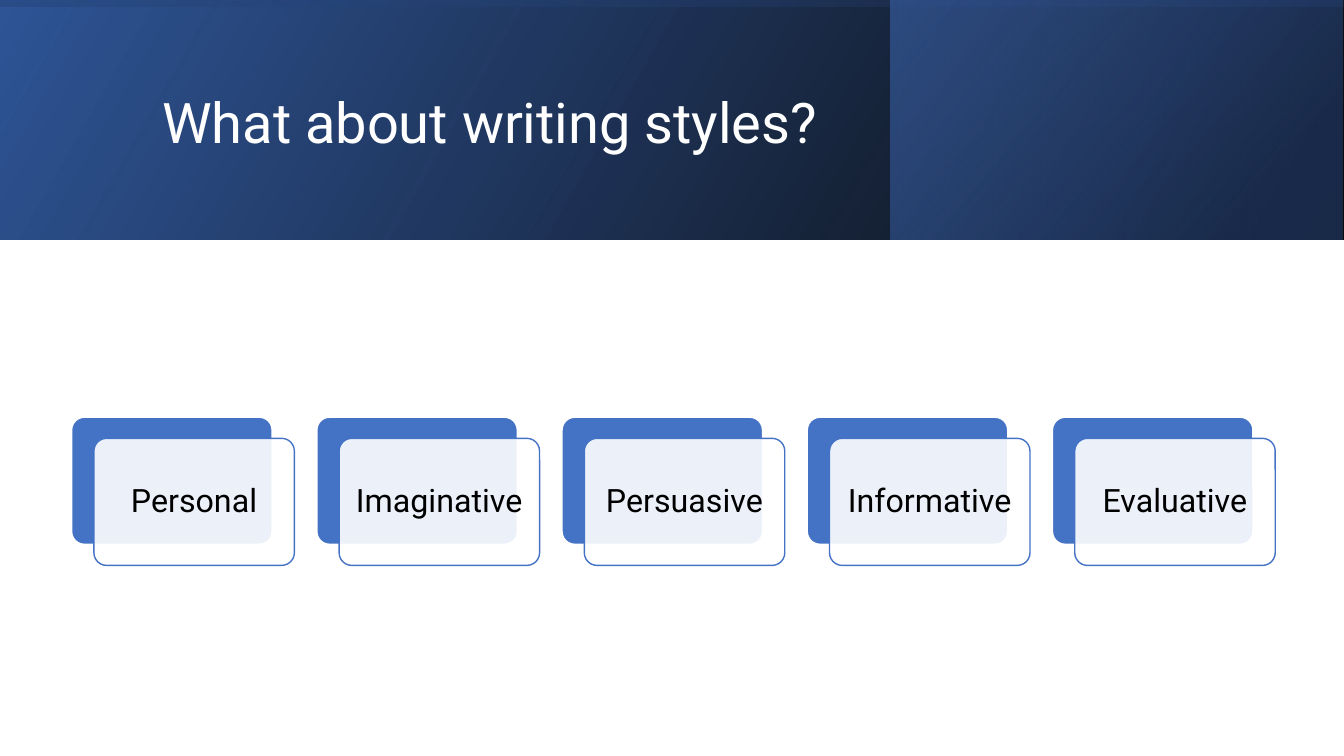
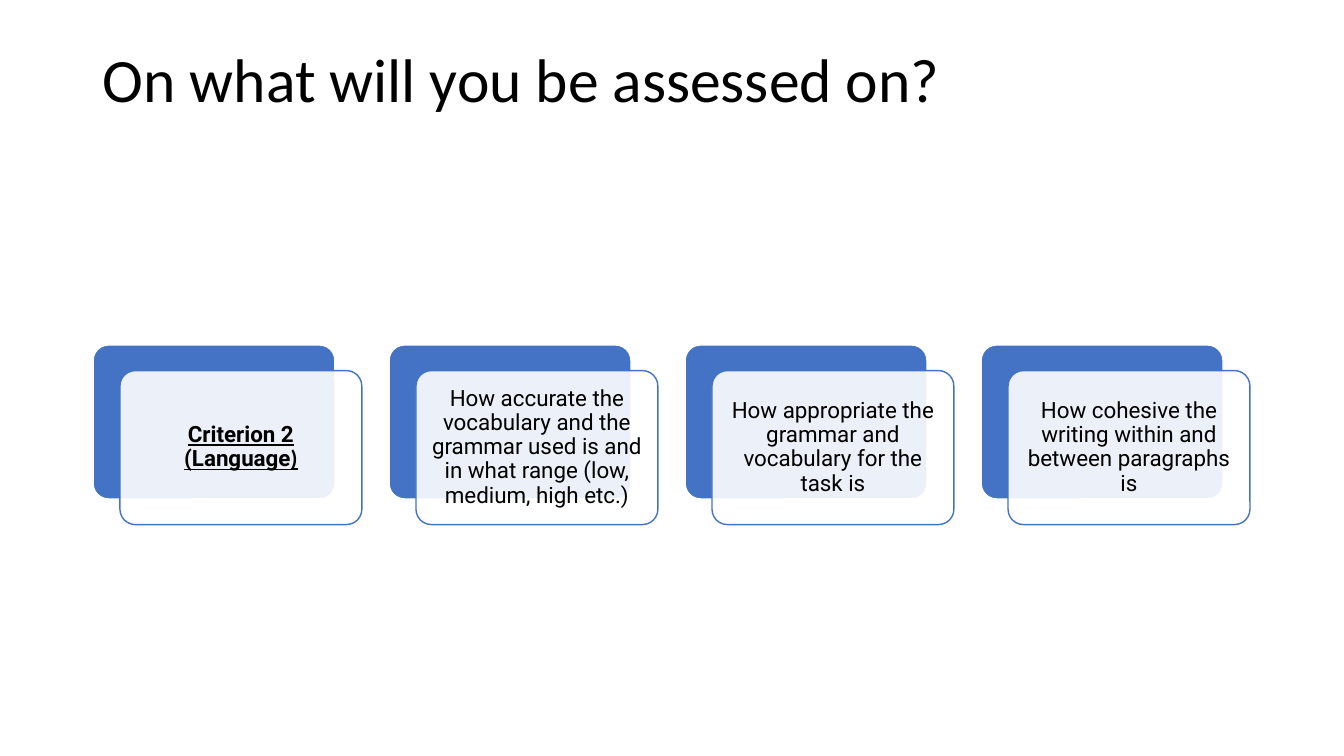
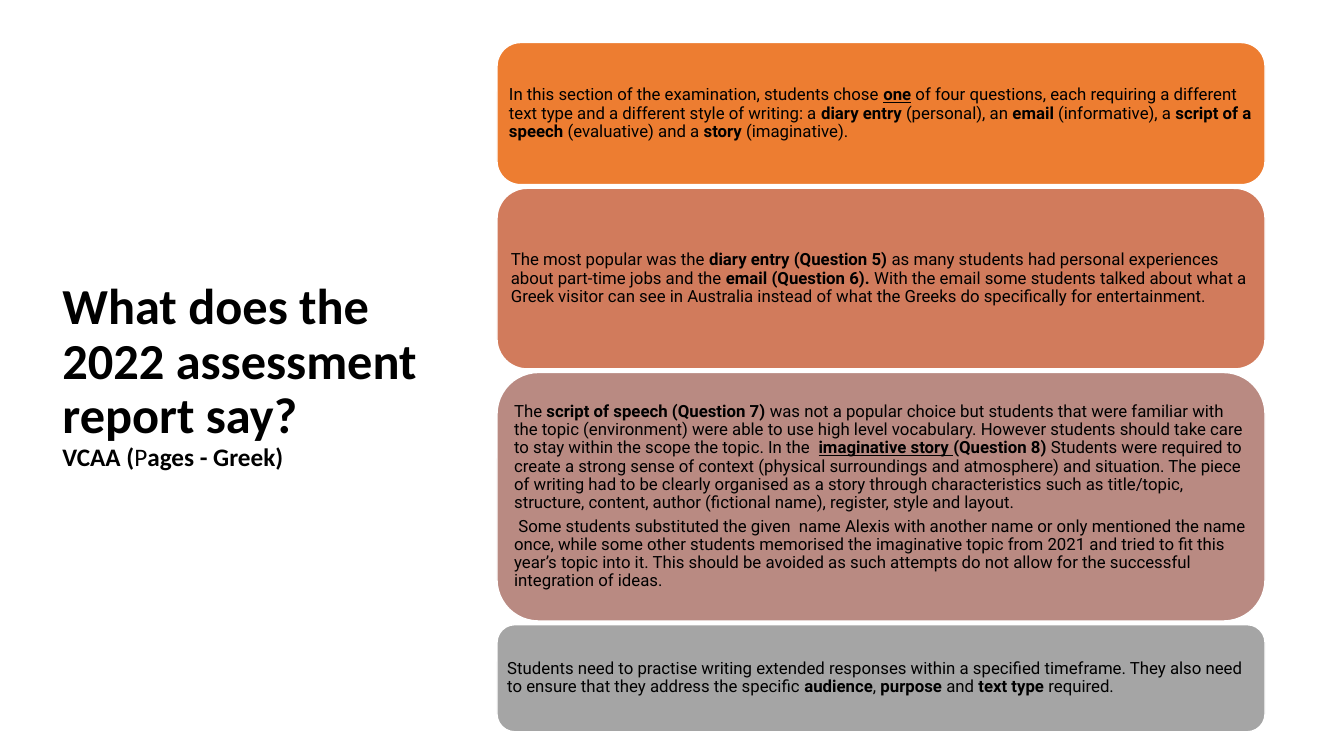
import pptx
import pptx.util
import pptx.dml.color
import pptx.enum.shapes
import pptx.enum.text
import pptx.oxml
import pptx.oxml.ns
from lxml import etree

Pt = pptx.util.Pt
ANCHOR = pptx.enum.text.MSO_ANCHOR
ALIGN = pptx.enum.text.PP_ALIGN

COLOURS = {
    "white": "FFFFFF", "black": "000000", "blue": "4472C4", "mid": "2F5597",
    "navy": "203864", "orange": "ED7D31", "coral": "D17B5C", "rose": "B98A82", "grey": "A5A5A5",
}
HEADING, BODY = "Calibri", "Roboto"

# Content. Runs are (text, flags): b bold, u underlined, h heading font, s small
STYLES = ["Personal", "Imaginative", "Persuasive", "Informative", "Evaluative"]
CRITERIA = [
    [("Criterion 2 (Language", "bu"), (")", "buh")],
    "How accurate the vocabulary and the grammar used is and in what range (low, medium, high etc.)",
    "How appropriate the grammar and vocabulary for the task is",
    "How cohesive the writing within and between paragraphs is",
]
REPORT_TITLE = [
    ("What does the 2022 assessment report say?\n", "b"),
    ("VCAA (", "bs"), ("P", "s"), ("ages - Greek)", "bs"),
]
# Panels: colour, height, paragraphs
REPORT = [
    ("orange", 101.5, [[
        ("In this section of the examination, students chose ", ""), ("one", "bu"),
        (" of four questions, each requiring a different text type and a different style of writing: a ", ""),
        ("diary entry ", "b"), ("(personal), an ", ""), ("email", "b"), (" (informative), a ", ""),
        ("script of a speech ", "b"), ("(evaluative) and a ", ""), ("story", "b"), (" (imaginative).", ""),
    ]]),
    ("coral", 129, [[
        ("The most popular was the ", ""), ("diary entry (Question 5) ", "b"),
        ("as many students had personal experiences about part-time jobs and the ", ""),
        ("email (Question 6). ", "b"),
        ("With the email some students talked about what a Greek visitor can see in Australia "
         "instead of what the Greeks do specifically for entertainment.", ""),
    ]]),
    ("rose", 177.5, [[
        ("The ", ""), ("script of speech (Question 7) ", "b"),
        ("was not a popular choice but students that were familiar with the topic (environment) "
         "were able to use high level vocabulary. However students should take care to stay within "
         "the scope the topic. In the  ", ""),
        ("imaginative story ", "bu"), ("(Question 8)", "b"),
        (" Students were required to create a strong sense of context (physical surroundings and "
         "atmosphere) and situation. The piece of writing had to be clearly organised as a story "
         "through characteristics such as title/topic, structure, content, author (fictional name), "
         "register, style and layout.", ""),
    ], " Some students substituted the given  name Alexis with another name or only mentioned the "
       "name once, while some other students memorised the imaginative topic from 2021 and tried to "
       "fit this year’s topic into it. This should be avoided as such attempts do not allow for the "
       "successful integration of ideas."]),
    ("grey", 76.5, [[
        ("Students need to practise writing extended responses within a specified timeframe. They "
         "also need to ensure that they address the specific ", ""),
        ("audience", "b"), (", ", ""), ("purpose", "b"), (" and ", ""), ("text type ", "b"),
        ("required.", ""),
    ]]),
]
# Header bands: box, rotation, gradient angle, stops (position, colour, opacity)
BANDS = [
    ((0, 0, 960, 170.8), 0, 330, [(0, "black", 96), (100, "mid", 100)]),
    ((636.2, 0, 323, 170.8), 0, 320, [(19, "navy", 68), (100, "blue", 48)]),
    ((394.6, -394.6, 170.8, 960), 270, 350, [(23, "mid", 16), (99, "black", 45)]),
]


def rgb(name):
    return pptx.dml.color.RGBColor.from_string(COLOURS[name])


def write_paragraph(paragraph, content, size, font, colour="black", align=ALIGN.LEFT):
    paragraph.alignment = align
    paragraph.line_spacing = 0.9
    paragraph.font.size = Pt(size)
    paragraph.font.name = font
    paragraph.font.color.rgb = rgb(colour)
    for text, flags in [(content, "")] if isinstance(content, str) else content:
        run = paragraph.add_run()
        run.text = text.rstrip("\n")
        if "b" in flags:
            run.font.bold = True
        if "u" in flags:
            run.font.underline = True
        if "h" in flags:
            run.font.name = HEADING
        if "s" in flags:
            run.font.size = Pt(18)
        if text.endswith("\n"):
            paragraph.add_line_break()


def add_titled_slide(presentation, content, box, size, font=HEADING, colour="black", anchor=ANCHOR.MIDDLE):
    slide = presentation.slides.add_slide(presentation.slide_layouts[5])
    title = slide.shapes.title
    title.left, title.top, title.width, title.height = map(Pt, box)
    frame = title.text_frame
    frame.auto_size = pptx.enum.text.MSO_AUTO_SIZE.NONE
    frame.vertical_anchor = anchor
    write_paragraph(frame.paragraphs[0], content, size, font, colour)
    return slide


def add_box(slide, kind, box, fill=None, line=None):
    shape = slide.shapes.add_shape(kind, *map(Pt, box))
    shape.shadow.inherit = False
    if fill:
        shape.fill.solid()
        shape.fill.fore_color.rgb = rgb(fill)
    if line:
        shape.line.color.rgb = rgb(line)
        shape.line.width = Pt(1)
    else:
        shape.line.fill.background()
    return shape


def set_opacity(colour_element, percent):
    alpha = etree.SubElement(colour_element, pptx.oxml.ns.qn("a:alpha"))
    alpha.set("val", str(percent * 1000))


def add_band(slide, box, rotation, angle, stops):
    band = add_box(slide, pptx.enum.shapes.MSO_SHAPE.RECTANGLE, box)
    band.rotation = rotation
    properties = band.element.spPr
    properties.find(pptx.oxml.ns.qn("a:xfrm")).set("flipH", "1")
    gradient = pptx.oxml.parse_xml(
        f'<a:gradFill {pptx.oxml.ns.nsdecls("a")} rotWithShape="1"><a:gsLst/>'
        f'<a:lin ang="{angle * 60000}" scaled="0"/></a:gradFill>')
    for position, colour, opacity in stops:
        stop = etree.SubElement(gradient[0], pptx.oxml.ns.qn("a:gs"), pos=str(position * 1000))
        set_opacity(etree.SubElement(stop, pptx.oxml.ns.qn("a:srgbClr"), val=COLOURS[colour]), opacity)
    properties.find(pptx.oxml.ns.qn("a:prstGeom")).addnext(gradient)


def fill_text(shape, paragraphs, size, inset, align):
    frame = shape.text_frame
    frame.word_wrap = True
    frame.vertical_anchor = ANCHOR.MIDDLE
    frame.margin_left = frame.margin_right = frame.margin_top = frame.margin_bottom = Pt(inset)
    for index, content in enumerate(paragraphs):
        paragraph = frame.paragraphs[0] if index == 0 else frame.add_paragraph()
        write_paragraph(paragraph, content, size, BODY, align=align)
        paragraph.space_after = Pt(round(size * 0.35, 1))


def add_cards(slide, items, left, top, width, height, pitch, offset, size, inset):
    """A row of solid cards, each with a translucent text card shifted over it."""
    rounded = pptx.enum.shapes.MSO_SHAPE.ROUNDED_RECTANGLE
    for index, item in enumerate(items):
        x = left + index * pitch
        back = add_box(slide, rounded, (x, top, width, height), "blue", "white")
        front = add_box(slide, rounded, (x + offset[0], top + offset[1], width, height), "white", "blue")
        back.adjustments[0] = front.adjustments[0] = 0.1
        fill = front.element.spPr.find(pptx.oxml.ns.qn("a:solidFill"))
        set_opacity(fill[0], 90)
        fill_text(front, [item], size, inset, ALIGN.CENTER)


def main():
    presentation = pptx.Presentation()
    presentation.slide_width, presentation.slide_height = Pt(960), Pt(540)

    # Writing styles
    slide = add_titled_slide(presentation, "What about writing styles?",
                             (108.7, 27.4, 765.4, 123.8), 40, BODY, "white")
    for band in BANDS:
        add_band(slide, *band)
    title = slide.shapes.title.element
    title.getparent().append(title)
    add_cards(slide, STYLES, 51.2, 298, 143.2, 90.8, 175.15, (15.9, 15.1), 23, 7.2)

    # Assessment criteria
    slide = add_titled_slide(presentation, "On what will you be assessed on?",
                             (66.2, 19.4, 827.3, 79.2), 44)
    add_cards(slide, CRITERIA, 66.5, 246.4, 172.8, 110, 211.45, (19.2, 18.3), 16, 4.8)

    # Assessment report
    slide = add_titled_slide(presentation, REPORT_TITLE, (37.4, 88.6, 277.2, 252), 36,
                             anchor=ANCHOR.BOTTOM)
    top, gap = 30.4, 2.6
    for colour, height, paragraphs in REPORT:
        panel = add_box(slide, pptx.enum.shapes.MSO_SHAPE.ROUNDED_RECTANGLE,
                        (355, top, 548.6, height), colour, "white")
        fill_text(panel, paragraphs, 12, 3.6, ALIGN.LEFT)
        top += height + gap

    presentation.save("out.pptx")


if __name__ == "__main__":
    main()
